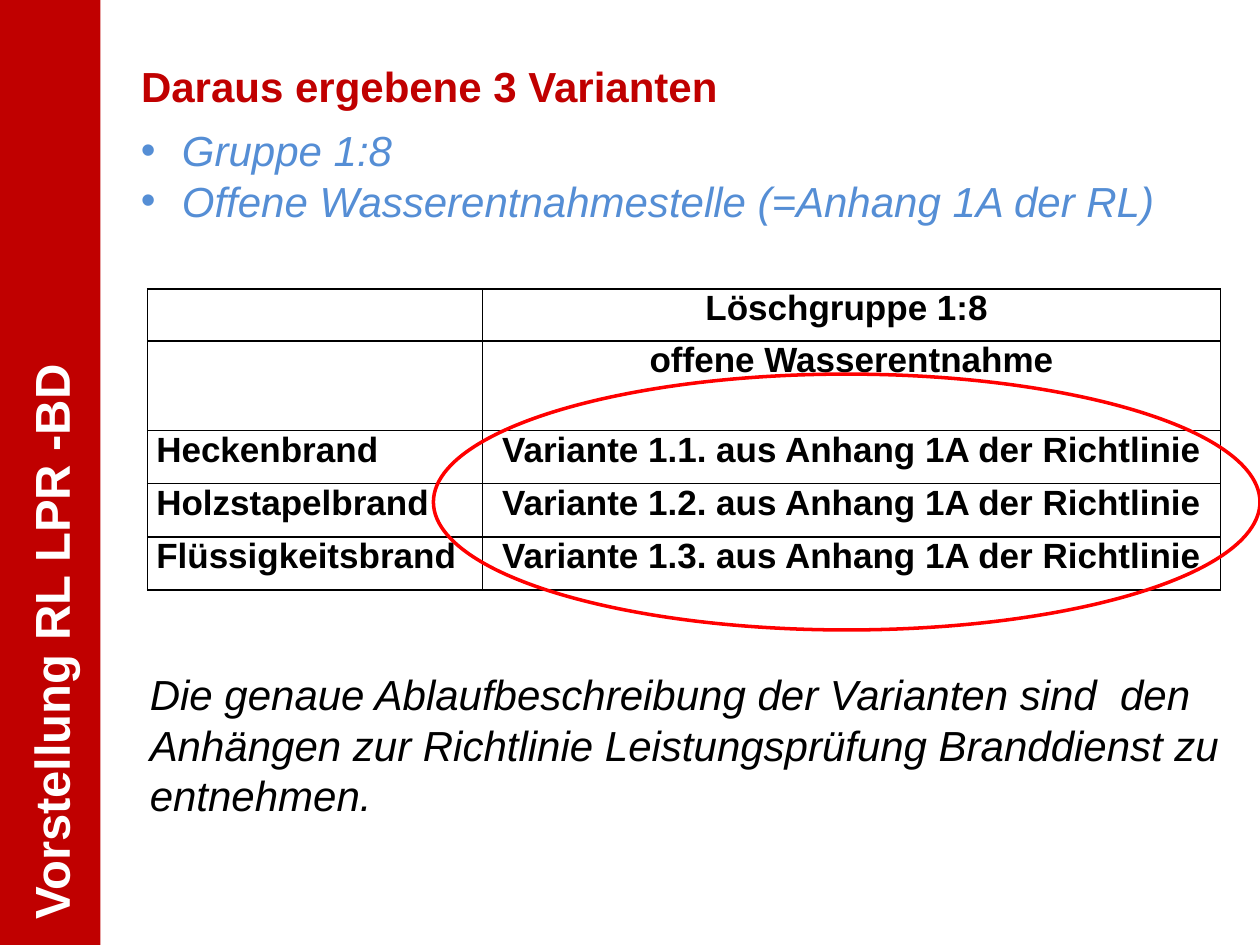
from dataclasses import dataclass

from lxml import etree
from pptx import Presentation
from pptx.dml.color import RGBColor
from pptx.enum.shapes import MSO_SHAPE
from pptx.enum.text import MSO_ANCHOR, MSO_AUTO_SIZE, PP_ALIGN
from pptx.oxml.ns import qn
from pptx.util import Pt

LEFT, CENTER = PP_ALIGN.LEFT, PP_ALIGN.CENTER
TOP, MIDDLE = MSO_ANCHOR.TOP, MSO_ANCHOR.MIDDLE
RECTANGLE, ELLIPSE = MSO_SHAPE.RECTANGLE, MSO_SHAPE.OVAL
NO_AUTOFIT = MSO_AUTO_SIZE.NONE
TITLE_ONLY = 5


@dataclass(frozen=True)
class Theme:
    font: str = "Arial"
    red: str = "C00000"
    blue: str = "558ED5"
    black: str = "000000"
    white: str = "FFFFFF"
    marker: str = "FF0000"
    banner_size: float = 28
    body_size: float = 24
    table_size: float = 20


class SlideBuilder:
    def __init__(self, page, theme):
        self.page = page
        self.theme = theme

    def style(self, para, size, color, bold=False, italic=False, align=LEFT):
        para.alignment = align
        for span in para.runs:
            span.font.name = self.theme.font
            span.font.size = Pt(size)
            span.font.bold = bold
            span.font.italic = italic
            span.font.color.rgb = RGBColor.from_string(color)

    def place(self, box, left, top, width, height):
        box.left, box.top = Pt(left), Pt(top)
        box.width, box.height = Pt(width), Pt(height)

    def shape(self, kind, left, top, width, height):
        shape = self.page.shapes.add_shape(
            kind, Pt(left), Pt(top), Pt(width), Pt(height))
        shape.shadow.inherit = False
        return shape

    def banner(self, text, thickness, length):
        """Vertical bar on the left edge, read from bottom to top."""
        bar = self.shape(RECTANGLE, (thickness - length) / 2,
                         (length - thickness) / 2, length, thickness)
        bar.rotation = 270
        bar.fill.solid()
        bar.fill.fore_color.rgb = RGBColor.from_string(self.theme.red)
        bar.line.fill.background()
        frame = bar.text_frame
        frame.margin_left = Pt(14.4)
        frame.vertical_anchor = MIDDLE
        frame.text = text
        self.style(frame.paragraphs[0], self.theme.banner_size,
                   self.theme.white, bold=True)

    def title(self, text, *position):
        box = self.page.shapes.title
        self.place(box, *position)
        frame = box.text_frame
        frame.text = text
        frame.word_wrap = True
        frame.auto_size = NO_AUTOFIT
        frame.vertical_anchor = TOP
        self.style(frame.paragraphs[0], self.theme.body_size,
                   self.theme.red, bold=True)

    def text(self, lines, color, *position, bullet_indent=0):
        box = self.page.shapes.add_textbox(*(Pt(value) for value in position))
        frame = box.text_frame
        frame.word_wrap = True
        frame.text = "\n".join(lines)
        for para in frame.paragraphs:
            if bullet_indent:
                self.bullet(para, bullet_indent)
            self.style(para, self.theme.body_size, color, italic=True)

    def bullet(self, para, indent):
        properties = para._p.get_or_add_pPr()
        properties.set("marL", str(Pt(indent)))
        properties.set("indent", str(-Pt(indent)))
        etree.SubElement(properties, qn("a:buFont"), typeface=self.theme.font)
        etree.SubElement(properties, qn("a:buChar"), char="•")

    def table(self, rows, left, top, widths, heights):
        table = self.page.shapes.add_table(
            len(rows), len(widths), Pt(left), Pt(top),
            Pt(sum(widths)), Pt(sum(heights))).table
        table.first_row = table.horz_banding = False
        for column, width in zip(table.columns, widths):
            column.width = Pt(width)
        for row, height, texts in zip(table.rows, heights, rows):
            row.height = Pt(height)
            for cell, text, align in zip(row.cells, texts, (LEFT, CENTER)):
                self.cell(cell, text, align)

    def cell(self, cell, text, align):
        cell.margin_left = cell.margin_right = Pt(5)
        cell.margin_top = cell.margin_bottom = 0
        properties = cell._tc.get_or_add_tcPr()
        for side in ("a:lnL", "a:lnR", "a:lnT", "a:lnB"):
            border = etree.SubElement(properties, qn(side), w=str(Pt(1)))
            fill = etree.SubElement(border, qn("a:solidFill"))
            etree.SubElement(fill, qn("a:srgbClr"), val=self.theme.black)
        cell.fill.background()
        if text:
            cell.text = text
            self.style(cell.text_frame.paragraphs[0], self.theme.table_size,
                       self.theme.black, bold=True, align=align)

    def highlight(self, *position):
        ring = self.shape(ELLIPSE, *position)
        ring.fill.background()
        ring.line.color.rgb = RGBColor.from_string(self.theme.marker)
        ring.line.width = Pt(2)


def main():
    deck = Presentation()
    deck.slide_width, deck.slide_height = Pt(720), Pt(540)
    page = deck.slides.add_slide(deck.slide_layouts[TITLE_ONLY])
    theme = Theme()
    builder = SlideBuilder(page, theme)

    # Side banner and heading
    builder.banner("Vorstellung RL LPR -BD", 57.4, 540)
    builder.title("Daraus ergebene 3 Varianten", 73.4, 31, 630, 36.7)

    # Conditions
    builder.text(["Gruppe 1:8",
                  "Offene Wasserentnahmestelle (=Anhang 1A der RL)"],
                 theme.blue, 73.4, 67.7, 630, 65.5, bullet_indent=23.5)

    # Variants by type of fire
    fires = ["Heckenbrand", "Holzstapelbrand", "Flüssigkeitsbrand"]
    rows = [("", "Löschgruppe 1:8 "), ("", "offene Wasserentnahme")]
    rows += [(fire, f"Variante 1.{number}. aus Anhang 1A der Richtlinie")
             for number, fire in enumerate(fires, 1)]
    builder.table(rows, 84.3, 165, [191.5, 421.7],
                  [30, 51] + [30.4] * len(fires))

    # Closing remark
    builder.text(["Die genaue Ablaufbeschreibung der Varianten sind  den "
                  "Anhängen zur Richtlinie Leistungsprüfung Branddienst zu "
                  "entnehmen."], theme.black, 78.5, 378.7, 630, 94.3)

    # Ring around the variants
    builder.highlight(247.7, 213.8, 472.3, 146.2)

    deck.save("out.pptx")


if __name__ == "__main__":
    main()
